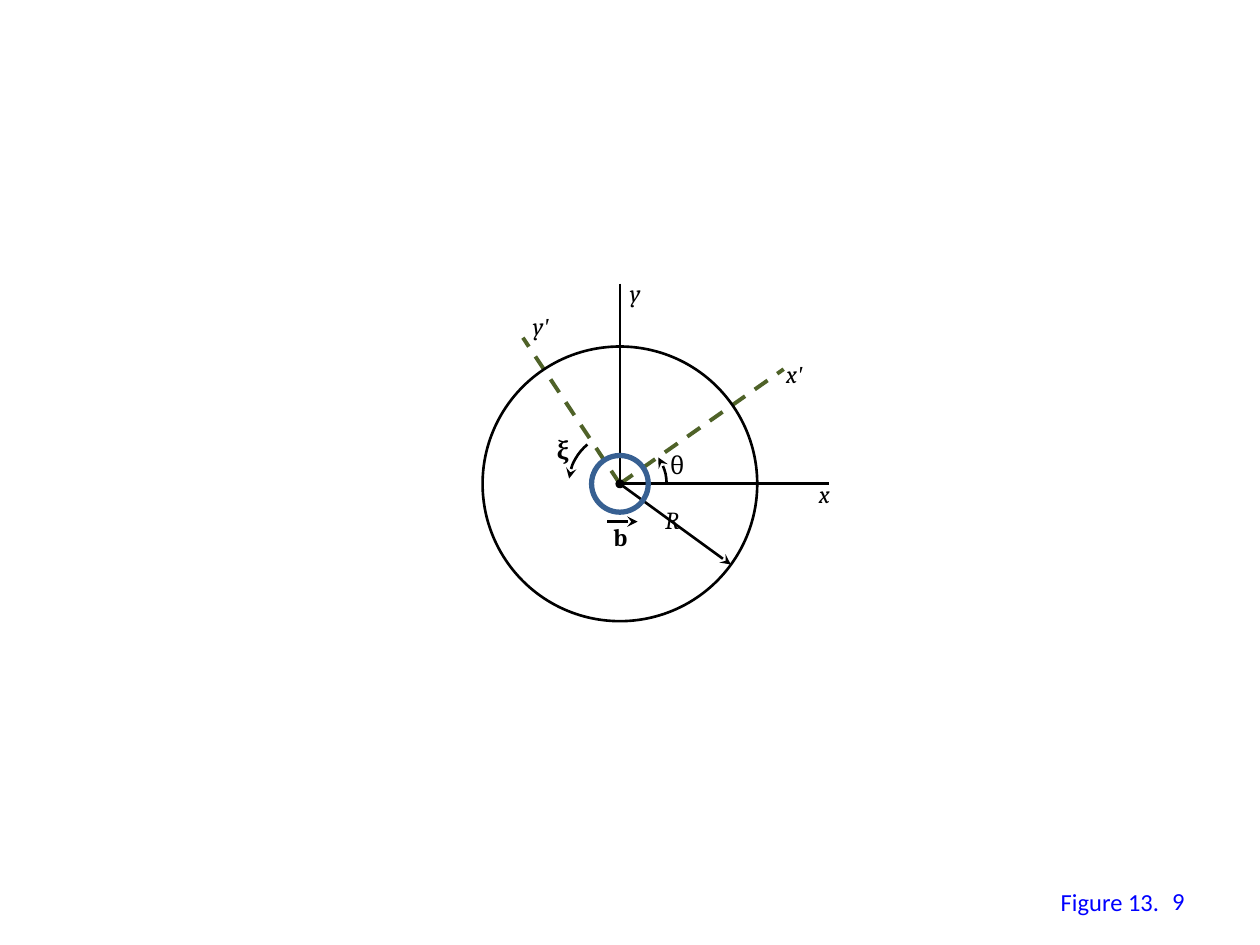
from dataclasses import dataclass
from typing import Optional

from lxml.etree import SubElement
from pptx import Presentation
from pptx.dml.color import RGBColor
from pptx.enum.dml import MSO_LINE
from pptx.enum.shapes import MSO_CONNECTOR, MSO_SHAPE
from pptx.enum.text import MSO_ANCHOR, MSO_AUTO_SIZE, PP_ALIGN
from pptx.oxml.ns import qn
from pptx.util import Inches, Pt

BLACK = RGBColor(0x00, 0x00, 0x00)
GREEN = RGBColor(0x4F, 0x62, 0x28)
STEEL = RGBColor(0x37, 0x60, 0x92)
BLUE = RGBColor(0x00, 0x00, 0xFF)

ORIGIN_X, ORIGIN_Y = 4.92, 3.84
ORIGIN = (ORIGIN_X, ORIGIN_Y)
ITALIC = {"italic": True}
BOLD = {"bold": True}


@dataclass(frozen=True)
class Stroke:
    start: tuple[float, float]
    end: tuple[float, float]
    color: RGBColor = BLACK
    width: float = 1.5
    dashed: bool = False
    arrow: bool = False


@dataclass(frozen=True)
class Ring:
    diameter: float
    color: RGBColor = BLACK
    width: float = 1.5
    filled: bool = False
    sweep: Optional[tuple[float, float]] = None  # clockwise degrees from the x axis


@dataclass(frozen=True)
class Label:
    text: str
    left: float
    top: float
    width: float
    style: dict
    prime: bool = False
    font: str = "Cambria"
    color: RGBColor = BLACK


STROKES = [
    Stroke(ORIGIN, (6.22, 2.93), GREEN, 2.25, dashed=True),
    Stroke(ORIGIN, (4.15, 2.68), GREEN, 2.25, dashed=True),
    Stroke(ORIGIN, (6.58, ORIGIN_Y)),
    Stroke((ORIGIN_X, 2.25), ORIGIN),
    Stroke(ORIGIN, (5.8, 4.48), arrow=True),
    Stroke((4.82, 4.14), (5.06, 4.14), arrow=True),
]

RINGS = [
    Ring(2.18),
    Ring(0.45, STEEL, 3),
    Ring(0.74, sweep=(325.54, 0)),
    Ring(0.81, sweep=(185.96, 230.47)),
    Ring(0.05, filled=True),
]

LABELS = [
    Label("x", 6.4, 3.75, 0.34, ITALIC),
    Label("y", 4.9, 2.16, 0.34, ITALIC),
    Label("x", 6.14, 2.8, 0.39, ITALIC, prime=True),
    Label("y", 4.13, 2.42, 0.39, ITALIC, prime=True),
    Label("b", 4.77, 4.09, 0.31, BOLD),
    Label("ξ", 4.32, 3.4, 0.3, BOLD),
    Label("θ", 5.22, 3.52, 0.31, {}),
    Label("R", 5.18, 3.96, 0.37, ITALIC),
    Label("Figure 13.", 8.32, 6.99, 0.99, {}, font="Calibri", color=BLUE),
]


def format_line(line, color: RGBColor, width: float) -> None:
    line.color.rgb = color
    line.width = Pt(width)


def add_arrowhead(line, tag: str) -> None:
    """Put a stealth arrowhead at the start (a:headEnd) or end (a:tailEnd)."""
    SubElement(line._get_or_add_ln(), qn(tag), type="stealth")


def draw_stroke(slide, stroke: Stroke) -> None:
    points = [Inches(value) for value in (*stroke.start, *stroke.end)]
    connector = slide.shapes.add_connector(MSO_CONNECTOR.STRAIGHT, *points)
    format_line(connector.line, stroke.color, stroke.width)
    if stroke.dashed:
        connector.line.dash_style = MSO_LINE.DASH
    if stroke.arrow:
        add_arrowhead(connector.line, "a:tailEnd")
    SubElement(connector._element.spPr, qn("a:effectLst"))


def draw_ring(slide, ring: Ring) -> None:
    """Draw a circle, dot or arc centred on the origin."""
    kind = MSO_SHAPE.ARC if ring.sweep else MSO_SHAPE.OVAL
    radius = ring.diameter / 2
    size = Inches(ring.diameter)
    shape = slide.shapes.add_shape(
        kind, Inches(ORIGIN_X - radius), Inches(ORIGIN_Y - radius), size, size
    )
    shape.shadow.inherit = False
    if ring.filled:
        shape.fill.solid()
        shape.fill.fore_color.rgb = ring.color
    else:
        shape.fill.background()
    format_line(shape.line, ring.color, ring.width)
    if ring.sweep:
        for index, degrees in enumerate(ring.sweep):
            shape.adjustments[index] = degrees * 0.6  # 60000 units a degree
        add_arrowhead(shape.line, "a:headEnd")


def add_span(para, text: str, font: str, color: RGBColor, style: dict) -> None:
    span = para.add_run()
    span.text = text
    for name, value in {"name": font, "size": Pt(14), **style}.items():
        setattr(span.font, name, value)
    span.font.color.rgb = color


def draw_label(slide, label: Label) -> None:
    box = slide.shapes.add_textbox(
        Inches(label.left), Inches(label.top), Inches(label.width), Inches(0.34)
    )
    frame = box.text_frame
    frame.word_wrap = False
    frame.auto_size = MSO_AUTO_SIZE.SHAPE_TO_FIT_TEXT
    para = frame.paragraphs[0]
    add_span(para, label.text, label.font, label.color, label.style)
    if label.prime:
        add_span(para, "'", "Times New Roman", label.color, label.style)


def draw_page_number(slide, number: str) -> None:
    box = slide.shapes.add_textbox(Inches(7.17), Inches(6.95), Inches(2.33), Inches(0.4))
    frame = box.text_frame
    frame.word_wrap = True
    frame.vertical_anchor = MSO_ANCHOR.MIDDLE
    para = frame.paragraphs[0]
    para.alignment = PP_ALIGN.RIGHT
    add_span(para, number, "Calibri", BLUE, {})


def main() -> None:
    deck = Presentation()
    deck.slide_width, deck.slide_height = Inches(10), Inches(7.5)
    slide = deck.slides.add_slide(deck.slide_layouts[6])
    for stroke in STROKES:
        draw_stroke(slide, stroke)
    for ring in RINGS:
        draw_ring(slide, ring)
    for label in LABELS:
        draw_label(slide, label)
    draw_page_number(slide, "9")
    deck.save("out.pptx")


if __name__ == "__main__":
    main()
